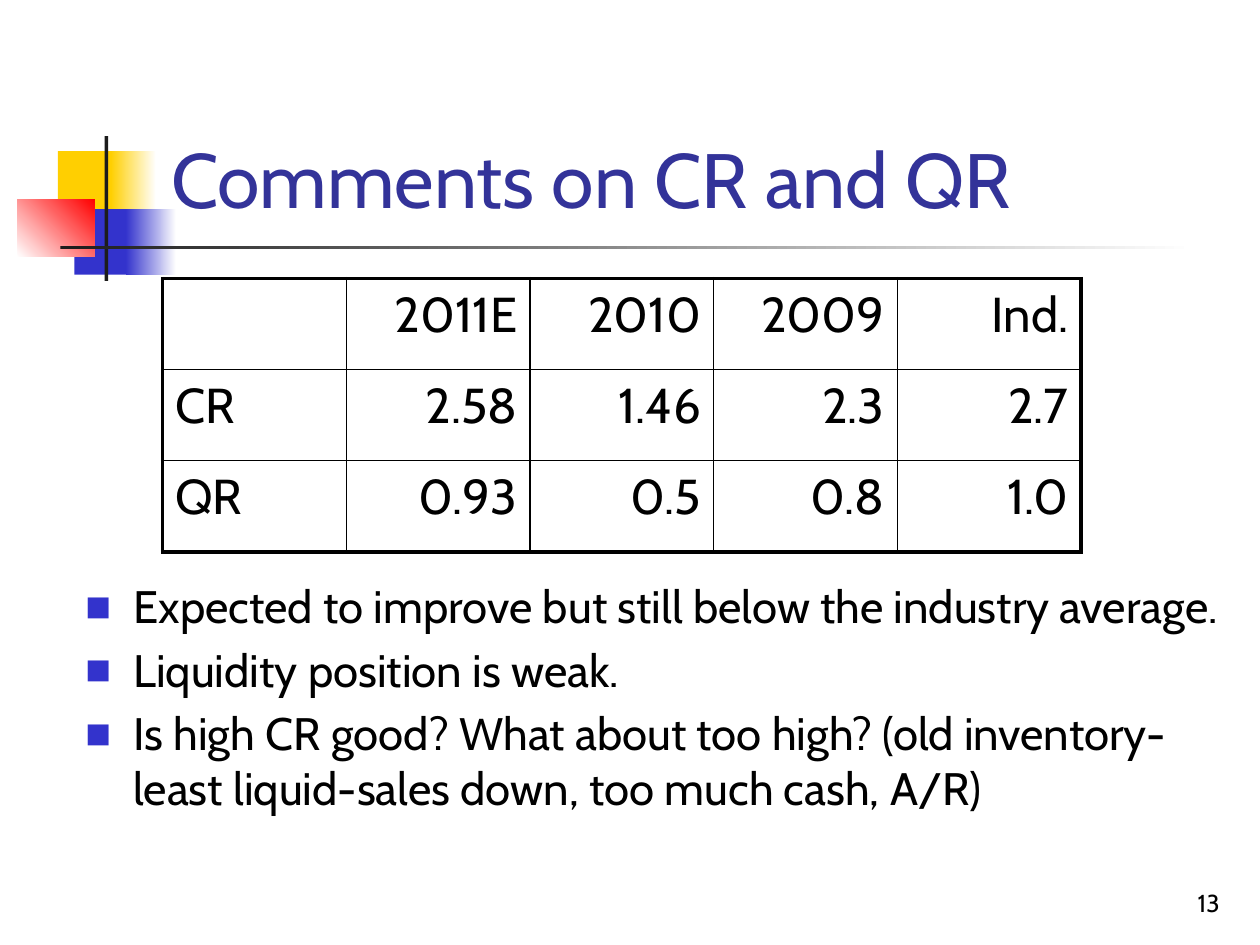
"""Build the slide commenting on current and quick ratios."""

from lxml.etree import SubElement
from pptx import Presentation
from pptx.dml.color import RGBColor
from pptx.enum.shapes import MSO_SHAPE
from pptx.enum.text import MSO_ANCHOR, PP_ALIGN
from pptx.oxml import parse_xml
from pptx.oxml.ns import nsdecls, qn
from pptx.util import Inches, Pt

TITLE = "Comments on CR and QR"
PAGE_NUMBER = "13"
RATIOS = [
    ["", "2011E", "2010", "2009", "Ind."],
    ["CR", "2.58", "1.46", "2.3", "2.7"],
    ["QR", "0.93", "0.5", "0.8", "1.0"],
]
COMMENTS = [
    "Expected to improve but still below the industry average.",
    "Liquidity position is weak.",
    "Is high CR good? What about too high? "
    "(old inventory-least liquid-sales down, too much cash, A/R)",
]
THEME = {
    "font": "Cabin",
    "title": "333399",
    "text": "000000",
    "yellow": "FFCF01",
    "blue": "3333CC",
    "red": "FF0000",
    "dark": "1C1C1C",
    "white": "FFFFFF",
    "title_size": 44,
    "table_size": 28,
    "body_size": 26,
    "number_size": 14,
    "outer_line": 2.25,
    "inner_line": 1,
}
ORNAMENTS = [
    ((0.46, 1.2, 0.48, 0.52), ["yellow"], 0),
    ((0.88, 1.2, 0.36, 0.52), ["yellow", "white"], 0),
    ((0.59, 1.66, 0.46, 0.52), ["blue"], 0),
    ((1, 1.66, 0.4, 0.52), ["blue", "white"], 0),
    ((0.14, 1.58, 0.61, 0.46), ["white", "red"], 45),
    ((0.83, 1.08, 0.03, 1.15), ["dark"], 0),
    ((0.48, 1.95, 9, 0.03), ["dark", "white"], 0),
]
TITLE_AREA = (1.26, 0.23, 8.52, 1.6)
TABLE_AREA = (1.29, 2.21, 7.29, 2.17)
BODY_AREA = (0.58, 4.54, 9.21, 2.17)
NUMBER_AREA = (7.7, 6.83, 2.08, 0.5)
BULLET_INDENT = 0.38


def inches(area):
    return [Inches(value) for value in area]


def color(name):
    return RGBColor.from_string(THEME[name])


def style(paragraph, size, ink="text", align=PP_ALIGN.LEFT, before=0):
    paragraph.alignment = align
    paragraph.space_before = Pt(before)
    paragraph.font.name = THEME["font"]
    paragraph.font.size = Pt(size)
    paragraph.font.color.rgb = color(ink)


def add_ornament(page, area, inks, angle):
    block = page.shapes.add_shape(MSO_SHAPE.RECTANGLE, *inches(area))
    block.shadow.inherit = False
    block.line.fill.background()
    if len(inks) == 1:
        block.fill.solid()
        block.fill.fore_color.rgb = color(inks[0])
        return
    block.fill.gradient()
    block.fill.gradient_angle = angle
    for stop, ink in zip(block.fill.gradient_stops, inks):
        stop.color.rgb = color(ink)


def add_text(page, area, lines, anchor, **look):
    box = page.shapes.add_textbox(*inches(area))
    frame = box.text_frame
    frame.word_wrap = True
    frame.vertical_anchor = anchor
    frame.text = "\n".join(lines)
    for paragraph in frame.paragraphs:
        style(paragraph, **look)
    return frame.paragraphs


def add_bullet(paragraph):
    properties = paragraph._p.get_or_add_pPr()
    properties.set("marL", str(Inches(BULLET_INDENT)))
    properties.set("indent", str(-Inches(BULLET_INDENT)))
    ink = SubElement(properties, qn("a:buClr"))
    SubElement(ink, qn("a:srgbClr"), val=THEME["blue"])
    SubElement(properties, qn("a:buSzPct"), val="60000")
    SubElement(properties, qn("a:buFont"), typeface=THEME["font"])
    SubElement(properties, qn("a:buChar"), char="■")


def set_borders(cell, outer_sides):
    properties = cell._tc.get_or_add_tcPr()
    for position, (side, is_outer) in enumerate(outer_sides.items()):
        width = Pt(THEME["outer_line" if is_outer else "inner_line"])
        properties.insert(position, parse_xml(
            f'<a:ln{side} {nsdecls("a")} w="{width}"><a:solidFill>'
            f'<a:srgbClr val="{THEME["text"]}"/></a:solidFill></a:ln{side}>'
        ))


def add_ratio_table(page):
    row_count, column_count = len(RATIOS), len(RATIOS[0])
    frame = page.shapes.add_table(row_count, column_count, *inches(TABLE_AREA))
    table = frame.table
    table.first_row = table.horz_banding = False
    for row, values in enumerate(RATIOS):
        for column, value in enumerate(values):
            cell = table.cell(row, column)
            cell.text = value
            cell.fill.background()
            align = PP_ALIGN.RIGHT if column else PP_ALIGN.LEFT
            size = THEME["table_size"]
            style(cell.text_frame.paragraphs[0], size, align=align, before=0.2 * size)
            set_borders(cell, {
                "L": column == 0,
                "R": column == column_count - 1,
                "T": row == 0,
                "B": row == row_count - 1,
            })


def main():
    deck = Presentation()
    deck.slide_width, deck.slide_height = Inches(10), Inches(7.5)
    page = deck.slides.add_slide(deck.slide_layouts[6])
    for ornament in ORNAMENTS:
        add_ornament(page, *ornament)
    add_text(page, NUMBER_AREA, [PAGE_NUMBER], MSO_ANCHOR.BOTTOM,
             size=THEME["number_size"], align=PP_ALIGN.RIGHT)
    add_text(page, TITLE_AREA, [TITLE], MSO_ANCHOR.BOTTOM,
             size=THEME["title_size"], ink="title")
    add_ratio_table(page)
    size = THEME["body_size"]
    for paragraph in add_text(page, BODY_AREA, COMMENTS, MSO_ANCHOR.TOP,
                              size=size, before=0.2 * size):
        add_bullet(paragraph)
    deck.save("out.pptx")


if __name__ == "__main__":
    main()
